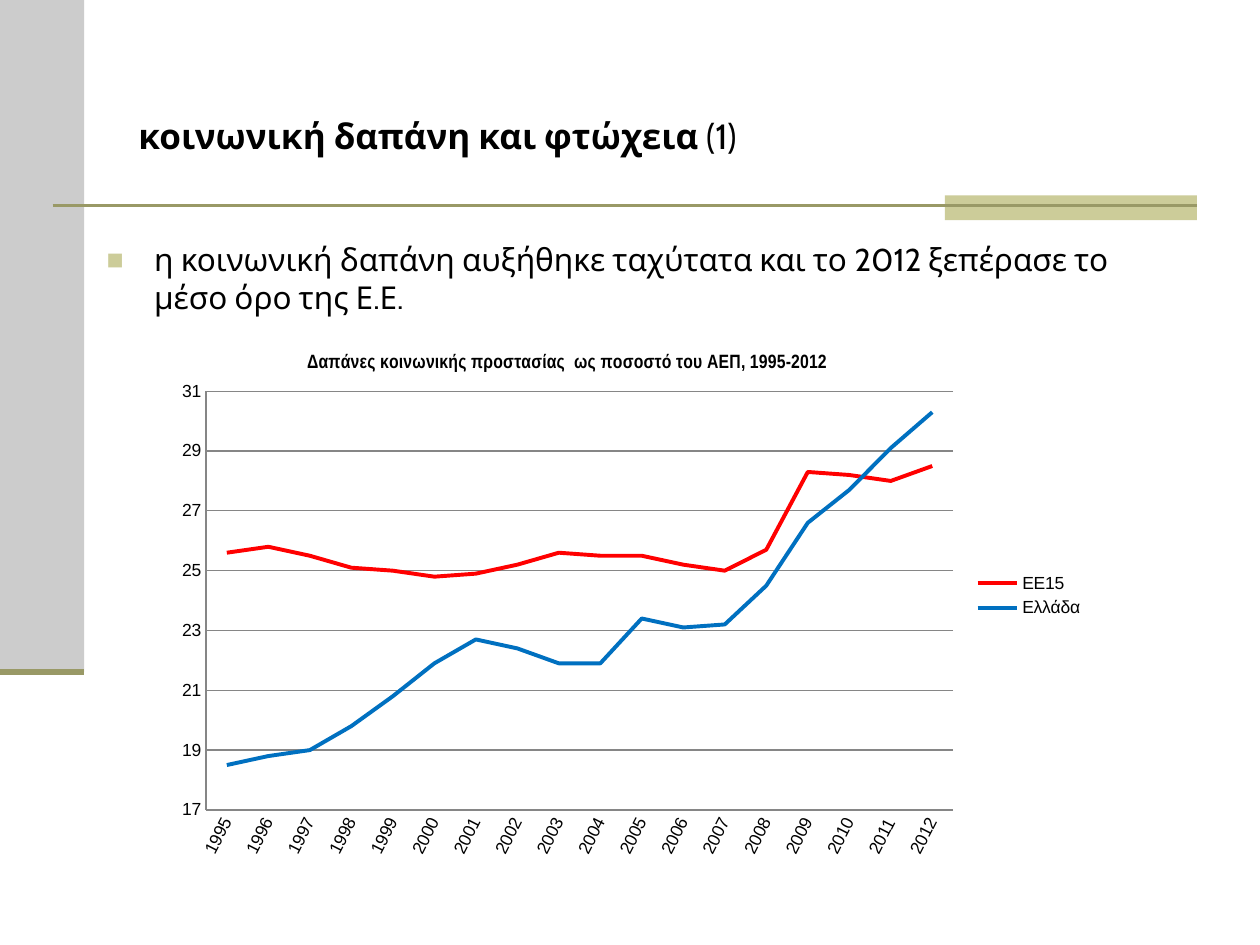
from lxml.etree import SubElement as Sub
from pptx import Presentation
from pptx.chart.data import CategoryChartData as Data
from pptx.dml.color import RGBColor
from pptx.enum.chart import XL_CHART_TYPE as Kind, XL_LEGEND_POSITION as Side
from pptx.enum.chart import XL_TICK_MARK as Tick
from pptx.enum.shapes import MSO_CONNECTOR as Link, MSO_SHAPE as Form
from pptx.enum.text import MSO_ANCHOR as Anchor
from pptx.oxml.ns import qn
from pptx.util import Cm, Pt

BLACK, GRAY, SAND, OLIVE = "000000", "CCCCCC", "CCCC99", "999966"
TILT = -63  # degrees, year labels
YEARS = [str(y) for y in range(1995, 2013)]
SPEND = {
    "ΕΕ15": ("FF0000", [25.6, 25.8, 25.5, 25.1, 25, 24.8, 24.9, 25.2, 25.6,
                        25.5, 25.5, 25.2, 25, 25.7, 28.3, 28.2, 28, 28.5]),
    "Ελλάδα": ("0070C0", [18.5, 18.8, 19, 19.8, 20.8, 21.9, 22.7, 22.4, 21.9,
                          21.9, 23.4, 23.1, 23.2, 24.5, 26.6, 27.7, 29.1, 30.3]),
}


def color(code):
    return RGBColor.from_string(code)


def style(obj, **vals):
    for key, val in vals.items():
        setattr(obj, key, val)


def font(obj, tint=BLACK, **vals):
    style(obj, **vals)
    obj.color.rgb = color(tint)


def block(slide, x, y, w, h, tint):
    box = slide.shapes.add_shape(Form.RECTANGLE, Cm(x), Cm(y), Cm(w), Cm(h))
    box.shadow.inherit = False
    box.fill.solid()
    box.fill.fore_color.rgb = color(tint)
    box.line.fill.background()


def rule(slide, x, y, end, width):
    line = slide.shapes.add_connector(Link.STRAIGHT, Cm(x), Cm(y), Cm(end), Cm(y))
    line.line.width = Pt(width)
    line.line.color.rgb = color(OLIVE)
    Sub(line._element.spPr, qn("a:effectLst"))


def text(slide, x, y, w, h, size, runs, anchor=Anchor.TOP):
    frame = slide.shapes.add_textbox(Cm(x), Cm(y), Cm(w), Cm(h)).text_frame
    style(frame, word_wrap=True, vertical_anchor=anchor)
    para = frame.paragraphs[0]
    for part, bold in runs:
        run = para.add_run()
        run.text = part
        font(run.font, name="Cabin", size=Pt(size), bold=bold)
    return para


def bullet(para):
    style(para, space_before=Pt(3.6), space_after=Pt(3.6))
    props = para._p.get_or_add_pPr()
    props.set("marL", str(Cm(0.96)))
    props.set("indent", str(-Cm(0.96)))
    Sub(Sub(props, qn("a:buClr")), qn("a:srgbClr"), val=SAND)
    Sub(props, qn("a:buSzPct"), val="90000")
    Sub(props, qn("a:buFont"), typeface="Arial")
    Sub(props, qn("a:buChar"), char="■")


def place(node, **spots):
    """Give a chart part a fixed place, in percent of the chart's size."""
    lay = node.find(qn("c:layout"))
    if lay is None:
        lay = node.makeelement(qn("c:layout"))
        node.insert(0, lay)
    man = Sub(lay, qn("c:manualLayout"))
    if "w" in spots:
        Sub(man, qn("c:layoutTarget"), val="inner")
    for key in "xy":
        Sub(man, qn(f"c:{key}Mode"), val="edge")
    for key, val in spots.items():
        Sub(man, qn(f"c:{key}"), val=str(val / 100))


def graph(slide, x, y, w, h):
    data = Data()
    data.categories = YEARS
    for name, (_, vals) in SPEND.items():
        data.add_series(name, vals)
    chart = slide.shapes.add_chart(Kind.LINE, Cm(x), Cm(y), Cm(w), Cm(h), data).chart
    font(chart.font, name="Arial", size=Pt(10))

    # Title and legend
    chart.has_title = True
    head = chart.chart_title
    head.text_frame.text = "Δαπάνες κοινωνικής προστασίας  ως ποσοστό του ΑΕΠ, 1995-2012"
    font(head.text_frame.paragraphs[0].runs[0].font,
         name="Arial Narrow", size=Pt(11), bold=True)
    place(head._element, x=15, y=4.8)
    chart.has_legend = True
    style(chart.legend, position=Side.RIGHT, include_in_layout=False)

    # Axes
    cat, val = chart.category_axis, chart.value_axis
    style(val, minimum_scale=17, maximum_scale=31, major_unit=2,
          has_major_gridlines=True)
    for axis in (cat, val):
        style(axis, major_tick_mark=Tick.NONE, minor_tick_mark=Tick.NONE)
        font(axis.tick_labels.font, name="Arial", size=Pt(10))
    for part in (cat.format, val.format, val.major_gridlines.format):
        part.line.width = Pt(0.75)
        part.line.color.rgb = color("868686")
    turn = cat._element.find(qn("c:txPr")).find(qn("a:bodyPr"))
    turn.set("rot", str(TILT * 60000))
    place(chart._chartSpace.chart.plotArea, x=4.55, y=12.6, w=80.1, h=76.6)

    # Lines
    plot = chart.plots[0]
    plot.vary_by_categories = False
    for row, (tint, _) in zip(plot.series, SPEND.values()):
        row.smooth = False
        row.format.line.width = Pt(2.25)
        row.format.line.color.rgb = color(tint)


def main():
    deck = Presentation()
    style(deck, slide_width=Cm(25.4), slide_height=Cm(19.05))
    slide = deck.slides.add_slide(deck.slide_layouts[6])

    # Side band and header bar
    block(slide, 0, 0, 1.7, 13.55, GRAY)
    block(slide, 19.05, 3.94, 5.08, 0.5, SAND)
    rule(slide, 1.06, 4.14, 24.13, 1.5)
    rule(slide, 0, 13.55, 1.7, 3.5)

    # Title and point
    text(slide, 2.54, 1.52, 21.59, 2.41, 20,
         [("κοινωνική δαπάνη και φτώχεια", True), (" (1)", False)], Anchor.MIDDLE)
    bullet(text(slide, 1.9, 4.72, 22.23, 1, 18, [
        ("η κοινωνική δαπάνη αυξήθηκε ταχύτατα και το 2012 ξεπέρασε το "
         "μέσο όρο της Ε.Ε.", False)]))

    # Spending chart
    graph(slide, 3.3, 6.5, 18.8, 11.02)
    deck.save("out.pptx")


if __name__ == "__main__":
    main()
